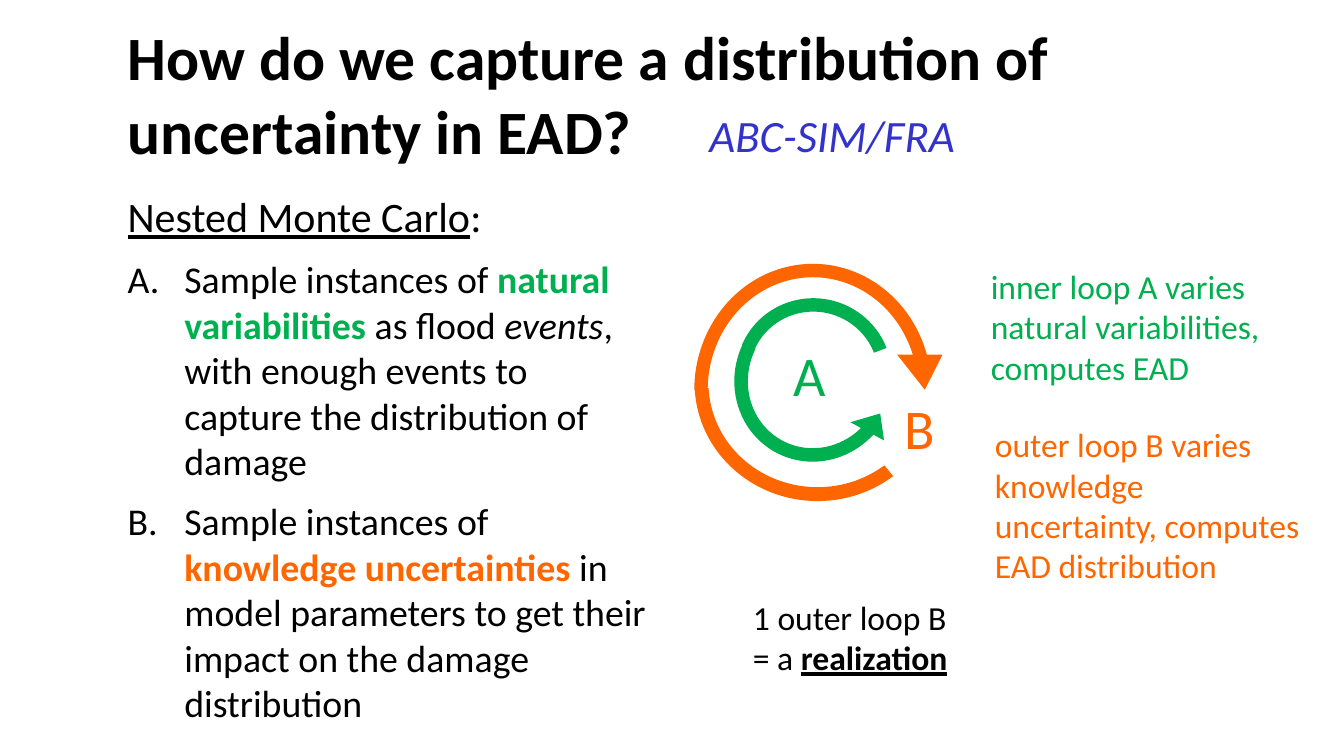
"""Build the slide on nested Monte Carlo loops for EAD uncertainty."""
from lxml import etree
from pptx import Presentation
from pptx.dml.color import RGBColor
from pptx.enum.shapes import MSO_SHAPE
from pptx.enum.text import MSO_ANCHOR, MSO_AUTO_SIZE, PP_ALIGN
from pptx.oxml.ns import qn
from pptx.util import Pt

ARROW, ARC = MSO_SHAPE.CIRCULAR_ARROW, MSO_SHAPE.BLOCK_ARC
LEFT, TOP, MIDDLE = PP_ALIGN.LEFT, MSO_ANCHOR.TOP, MSO_ANCHOR.MIDDLE
NO_FIT = MSO_AUTO_SIZE.NONE

COLORS = {"black": "000000", "inner": "00B050", "outer": "FF6600", "tool": "3333CC"}
FONT = "Calibri"
WIDE_INSETS, SLIM_INSETS = (10, 5), (7.2, 3.6)

TITLE = [("How do we capture a distribution of uncertainty in EAD?", "black", "b")]
TITLE_BOX = (84, 21.5, 791.5, 90)
BODY_BOX = (84, 132.5, 385, 324)

# (size, indent, numbered, runs)
BODY = [
    (30, 27, False, [("Nested Monte Carlo", "black", "u"), (":", "black", "")]),
    (27, 40.5, True, [
        ("Sample instances of ", "black", ""),
        ("natural variabilities ", "inner", "b"),
        ("as flood ", "black", ""),
        ("events", "black", "i"),
        (", with enough events to capture the distribution of damage", "black", ""),
    ]),
    (27, 40.5, True, [
        ("Sample instances of ", "black", ""),
        ("knowledge uncertainties ", "outer", "b"),
        ("in model parameters to get their impact on the damage distribution", "black", ""),
    ]),
]

LOOPS = [
    (ARROW, "inner", (516.2, 201.6, 132.5, 137.5), 206.5, True,
     (0.073, 10.319, 204.551, 108, 0.103)),
    (ARC, "inner", (525.6, 213.1, 111.6, 110.2), 18.9, True, (131.757, 213.73, 0.087)),
    (ARROW, "outer", (484.6, 177.1, 192.2, 203), 0, False,
     (0.05, 10.89, 205.032, 108, 0.084)),
    (ARC, "outer", (496.1, 189.4, 175.7, 168.5), 180, False, (138.534, 214.442, 0.059)),
]

LABELS = [
    ((697.7, 185, 217.4, 97.2), 24, WIDE_INSETS,
     [("inner loop A varies natural variabilities, computes EAD", "inner", "")]),
    ((556.6, 238.3, 31.7, 58.3), 40, WIDE_INSETS, [("A", "inner", "")]),
    ((635.8, 275.8, 31.7, 58.3), 40, WIDE_INSETS, [("B", "outer", "")]),
    ((700.6, 298.1, 238.3, 126.7), 24, WIDE_INSETS,
     [("outer loop B varies knowledge uncertainty, computes EAD distribution", "outer", "")]),
    ((527.8, 421.2, 167.8, 68.4), 24, WIDE_INSETS,
     [("1 outer loop B = a ", "black", ""), ("realization", "black", "bu")]),
    ((499.7, 73.4, 337, 46.1), 32, SLIM_INSETS, [("ABC-SIM/FRA", "tool", "i")]),
]


def rgb(name):
    return RGBColor.from_string(COLORS[name])


def place(shape, box):
    shape.left, shape.top, shape.width, shape.height = map(Pt, box)


def set_frame(tf, anchor, insets):
    tf.word_wrap = True
    tf.auto_size = NO_FIT
    tf.vertical_anchor = anchor
    tf.margin_left = tf.margin_right = Pt(insets[0])
    tf.margin_top = tf.margin_bottom = Pt(insets[1])


def write_runs(p, size, runs):
    p.alignment = LEFT
    for text, color, style in runs:
        r = p.add_run()
        r.text = text
        font = r.font
        font.name, font.size = FONT, Pt(size)
        font.color.rgb = rgb(color)
        font.bold, font.italic, font.underline = ("b" in style, "i" in style, "u" in style)


def set_indent(p, indent, numbered):
    ppr = p._p.get_or_add_pPr()
    ppr.set("marL", str(Pt(indent)))
    ppr.set("indent", str(-Pt(indent)))
    if numbered:
        etree.SubElement(ppr, qn("a:buFont"), typeface="+mj-lt")
        etree.SubElement(ppr, qn("a:buAutoNum"), type="alphaUcPeriod")
    else:
        etree.SubElement(ppr, qn("a:buNone"))


def add_loop(s, kind, color, box, rotation, flipped, adjustments):
    sp = s.shapes.add_shape(kind, *map(Pt, box))
    sp.shadow.inherit = False
    sp.fill.solid()
    sp.fill.fore_color.rgb = rgb(color)
    sp.line.fill.background()
    sp.rotation = rotation
    if flipped:
        sp._element.spPr.find(qn("a:xfrm")).set("flipH", "1")
    for i, value in enumerate(adjustments):
        sp.adjustments[i] = value


def add_label(s, box, size, insets, runs):
    tf = s.shapes.add_textbox(*map(Pt, box)).text_frame
    set_frame(tf, TOP, insets)
    write_runs(tf.paragraphs[0], size, runs)


def main():
    prs = Presentation()
    prs.slide_width, prs.slide_height = Pt(960), Pt(540)
    s = prs.slides.add_slide(prs.slide_layouts[1])

    title, body = s.shapes.title, s.placeholders[1]
    place(title, TITLE_BOX)
    set_frame(title.text_frame, MIDDLE, SLIM_INSETS)
    write_runs(title.text_frame.paragraphs[0], 44, TITLE)

    place(body, BODY_BOX)
    tf = body.text_frame
    set_frame(tf, TOP, SLIM_INSETS)
    for i, (size, indent, numbered, runs) in enumerate(BODY):
        p = tf.add_paragraph() if i else tf.paragraphs[0]
        p.space_before = Pt(0.4 * size if i else 0)
        set_indent(p, indent, numbered)
        write_runs(p, size, runs)

    for loop in LOOPS:
        add_loop(s, *loop)
    for label in LABELS:
        add_label(s, *label)
    prs.save("out.pptx")


if __name__ == "__main__":
    main()
